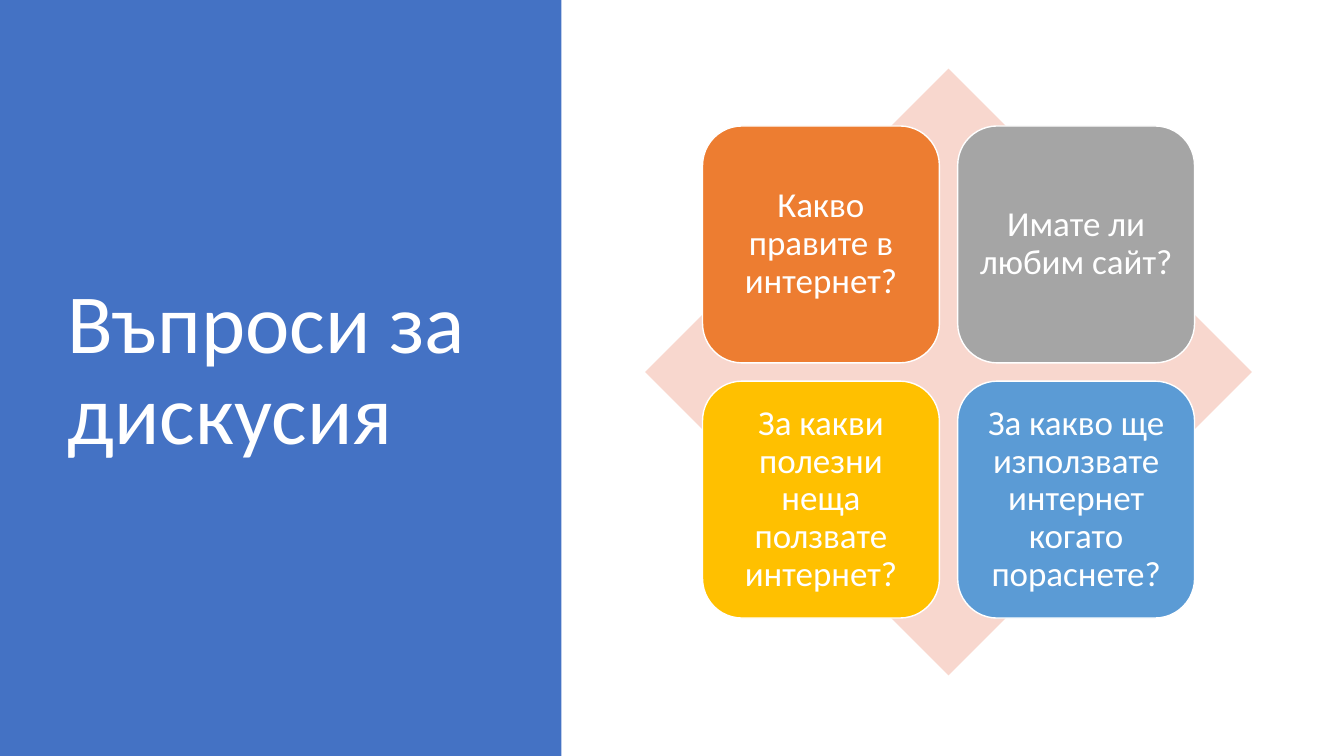
import dataclasses

import pptx
import pptx.dml.color
import pptx.enum.shapes
import pptx.enum.text
import pptx.util

Cm = pptx.util.Cm
Pt = pptx.util.Pt
RGB = pptx.dml.color.RGBColor.from_string
SHAPE = pptx.enum.shapes.MSO_SHAPE
ALIGN = pptx.enum.text.PP_ALIGN


@dataclasses.dataclass(frozen=True)
class Theme:
    font: str = "Calibri"
    title_size: int = 60
    card_size: int = 25
    white: str = "FFFFFF"
    panel: str = "4472C4"
    diamond: str = "F8D7CE"


@dataclasses.dataclass(frozen=True)
class Card:
    text: str
    fill: str


THEME = Theme()
CARDS = [
    Card("Какво правите в интернет?", "ED7D31"),
    Card("Имате ли любим сайт?", "A5A5A5"),
    Card("За какви полезни неща ползвате интернет?", "FFC000"),
    Card("За какво ще използвате интернет когато пораснете?", "5B9BD5"),
]

# Diagram geometry in centimetres: the cards are centred on the diamond
DIAMOND_LEFT, DIAMOND_TOP, DIAMOND_SIZE = 16.26, 1.73, 15.29
CARD_SIZE, CARD_GAP = 5.97, 0.46
CARD_PITCH = CARD_SIZE + CARD_GAP
CARD_INSET = (DIAMOND_SIZE - CARD_PITCH - CARD_SIZE) / 2


def add_block(shapes, kind: int, left: float, top: float,
              width: float, height: float, fill: str):
    """Draw a flat, unlined shape; lengths are centimetres."""
    sp = shapes.add_shape(kind, Cm(left), Cm(top), Cm(width), Cm(height))
    sp.shadow.inherit = False
    sp.fill.solid()
    sp.fill.fore_color.rgb = RGB(fill)
    sp.line.fill.background()
    return sp


def write_text(sp, text: str, size: int, align: int) -> None:
    tf = sp.text_frame
    tf.text = text
    tf.word_wrap = True
    tf.auto_size = pptx.enum.text.MSO_AUTO_SIZE.NONE
    tf.vertical_anchor = pptx.enum.text.MSO_ANCHOR.MIDDLE
    p = tf.paragraphs[0]
    p.alignment = align
    p.line_spacing = 0.9
    r = p.runs[0]
    r.font.name = THEME.font
    r.font.size = Pt(size)
    r.font.color.rgb = RGB(THEME.white)


def add_card(shapes, card: Card, left: float, top: float) -> None:
    sp = add_block(shapes, SHAPE.ROUNDED_RECTANGLE, left, top,
                   CARD_SIZE, CARD_SIZE, card.fill)
    sp.line.color.rgb = RGB(THEME.white)
    sp.line.width = Pt(1)
    tf = sp.text_frame
    tf.margin_left = tf.margin_right = Cm(0.25)
    tf.margin_top = tf.margin_bottom = Cm(0.25)
    write_text(sp, card.text, THEME.card_size, ALIGN.CENTER)


def main() -> None:
    prs = pptx.Presentation()
    prs.slide_width, prs.slide_height = Cm(33.87), Cm(19.05)
    s = prs.slides.add_slide(prs.slide_layouts[5])

    # Coloured panel, sent behind the title
    panel = add_block(s.shapes, SHAPE.RECTANGLE, 0, 0, 14.15, 19.05, THEME.panel)
    title = s.shapes.title
    title._element.addprevious(panel._element)

    # Title
    title.left, title.top = Cm(1.45), Cm(1.73)
    title.width, title.height = Cm(10.57), Cm(15.29)
    write_text(title, "Въпроси за дискусия", THEME.title_size, ALIGN.LEFT)

    # Diamond with a two by two grid of question cards
    diagram = s.shapes.add_group_shape().shapes
    add_block(diagram, SHAPE.DIAMOND, DIAMOND_LEFT, DIAMOND_TOP,
              DIAMOND_SIZE, DIAMOND_SIZE, THEME.diamond)
    for i, card in enumerate(CARDS):
        row, col = divmod(i, 2)
        add_card(diagram, card,
                 DIAMOND_LEFT + CARD_INSET + col * CARD_PITCH,
                 DIAMOND_TOP + CARD_INSET + row * CARD_PITCH)

    prs.save("out.pptx")


if __name__ == "__main__":
    main()
